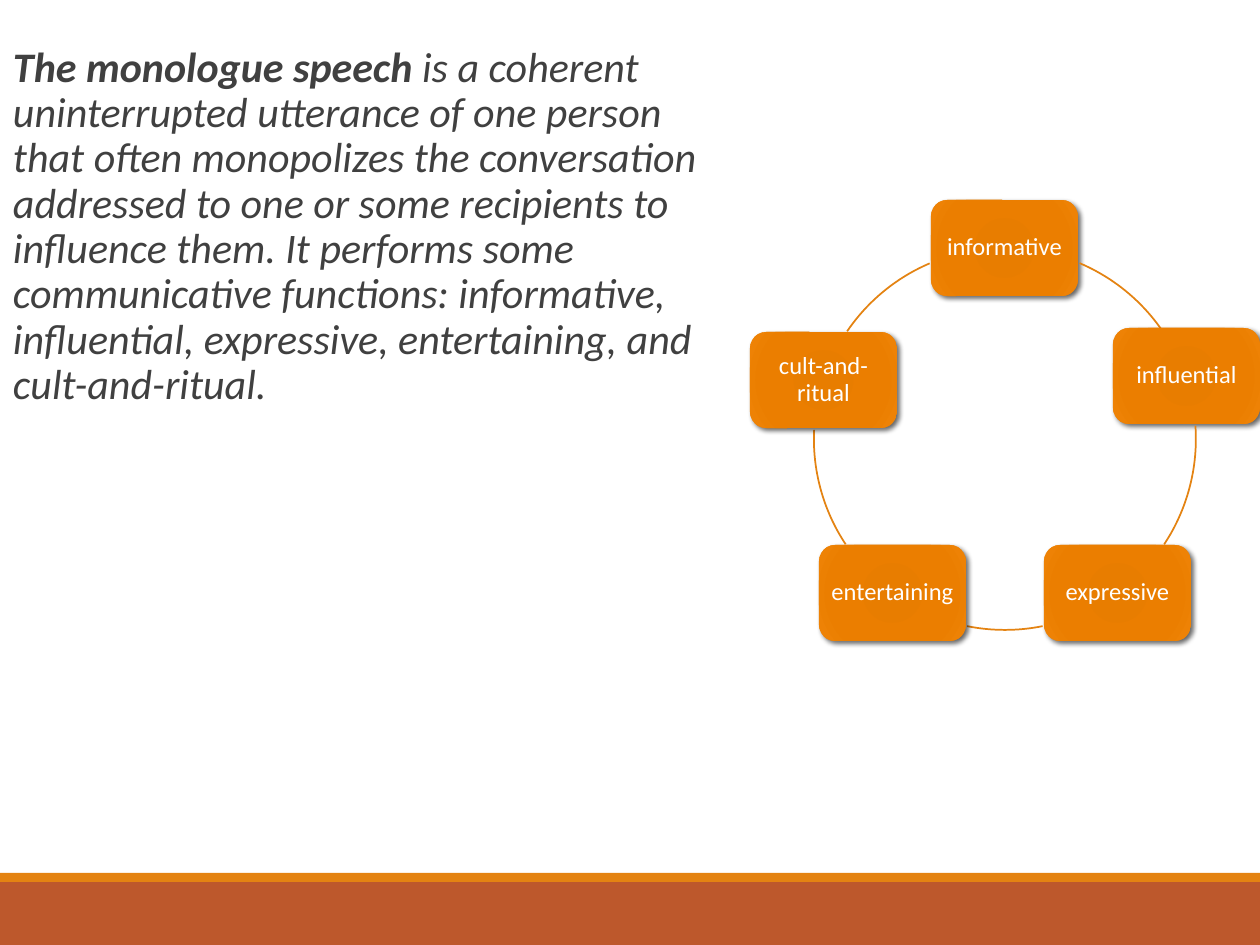
from pptx import Presentation
from pptx.dml.color import RGBColor
from pptx.enum.shapes import MSO_SHAPE
from pptx.enum.text import MSO_ANCHOR, MSO_AUTO_SIZE, PP_ALIGN
from pptx.oxml import parse_xml
from pptx.oxml.ns import nsdecls, qn
from pptx.util import Pt

PX = 914400 // 126
RECT, ROUNDED, ARC = MSO_SHAPE.RECTANGLE, MSO_SHAPE.ROUNDED_RECTANGLE, MSO_SHAPE.ARC
TOP, MIDDLE = MSO_ANCHOR.TOP, MSO_ANCHOR.MIDDLE
LEFT, CENTER = PP_ALIGN.LEFT, PP_ALIGN.CENTER
NO_AUTOFIT = MSO_AUTO_SIZE.NONE
ORANGE = "E48312"


def color(value):
    return RGBColor.from_string(value)


def add_plain(kind, left, top, width, height):
    shape = slide.shapes.add_shape(kind, left * PX, top * PX, width * PX, height * PX)
    shape.shadow.inherit = False
    shape.line.fill.background()
    return shape


prs = Presentation()
prs.slide_width, prs.slide_height = 1260 * PX, 945 * PX
slide = prs.slides.add_slide(prs.slide_layouts[1])
title = slide.shapes.title
title.element.getparent().remove(title.element)

# Footer bands
for top, height, band_color in [(882, 63, "BD582C"), (873, 9, ORANGE)]:
    band = add_plain(RECT, 0, top, 1260, height)
    band.fill.solid()
    band.fill.fore_color.rgb = color(band_color)

# Definition of the monologue speech
definition = slide.placeholders[1]
definition.left, definition.top = 0, 40 * PX
definition.width, definition.height = 709 * PX, 808 * PX
frame = definition.text_frame
frame.word_wrap = True
frame.auto_size = NO_AUTOFIT
frame.vertical_anchor = TOP
frame.margin_left = frame.margin_right = 0
frame.margin_top = frame.margin_bottom = 6 * PX
paragraph = frame.paragraphs[0]
paragraph.alignment = LEFT
paragraph.line_spacing = 0.9
paragraph.space_before, paragraph.space_after = Pt(12), Pt(2)
font = paragraph.font
font.name, font.size, font.italic = "Calibri", Pt(24), True
font.color.rgb = color("404040")
term = paragraph.add_run()
term.text = "The monologue speech"
term.font.bold = True
paragraph.add_run().text = (
    " is a coherent uninterrupted utterance of one person that often monopolizes "
    "the conversation addressed to one or some recipients to influence them. "
    "It performs some communicative functions: informative, influential, "
    "expressive, entertaining, and cult-and-ritual."
)

# Hanging indent with a blank bullet
properties = paragraph._p.get_or_add_pPr()
properties.set("marL", str(13 * PX))
properties.set("indent", str(-13 * PX))
bullet = parse_xml(f'<a:buChar {nsdecls("a")} char=" "/>')
properties.find(qn("a:defRPr")).addprevious(bullet)

# Cycle of functions: label, left, top, then start and end angle of the next arc
functions = [
    ("informative", 931, 200, 293, 324.6),
    ("influential", 1113, 328, 356, 33.5),
    ("expressive", 1044, 545, 78.6, 101.4),
    ("entertaining", 819, 545, 146.5, 182.7),
    ("cult-and-ritual", 750, 332, 214.3, 246.8),
]
stops = "".join(
    f'<a:gs pos="{position * 1000}"><a:srgbClr val="{shade}"/></a:gs>'
    for position, shade in [(0, "E57B00"), (34, "E87D00"), (70, "EB7E00"), (100, "EF8407")]
)
gradient_xml = (
    f'<a:gradFill {nsdecls("a")}><a:gsLst>{stops}</a:gsLst><a:path path="circle">'
    '<a:fillToRect l="50000" t="50000" r="50000" b="50000"/></a:path></a:gradFill>'
)
shadow_xml = (
    f'<a:outerShdw {nsdecls("a")} blurRad="38100" dist="25400" dir="2700000" rotWithShape="0">'
    '<a:srgbClr val="000000"><a:alpha val="60000"/></a:srgbClr></a:outerShdw>'
)

for label, left, top, start, end in functions:
    # Function box
    box = add_plain(ROUNDED, left, top, 147, 96)
    style = box.element.spPr
    style.find(qn("a:ln")).addprevious(parse_xml(gradient_xml))
    style.find(qn("a:effectLst")).append(parse_xml(shadow_xml))
    frame = box.text_frame
    frame.word_wrap = True
    frame.vertical_anchor = MIDDLE
    frame.margin_left = frame.margin_right = 5 * PX
    frame.margin_top = frame.margin_bottom = 8 * PX
    paragraph = frame.paragraphs[0]
    paragraph.text = label
    paragraph.alignment = CENTER
    paragraph.line_spacing = 0.9
    paragraph.font.name, paragraph.font.size = "Calibri", Pt(14)
    paragraph.font.color.rgb = color("FFFFFF")

    # Arc to the next box; 0.6 turns degrees into adjustment units
    arc = add_plain(ARC, 814, 248, 382, 382)
    arc.adjustments[0], arc.adjustments[1] = start * 0.6, end * 0.6
    arc.fill.background()
    arc.line.color.rgb = color(ORANGE)
    arc.line.width = Pt(1)

prs.save("out.pptx")
